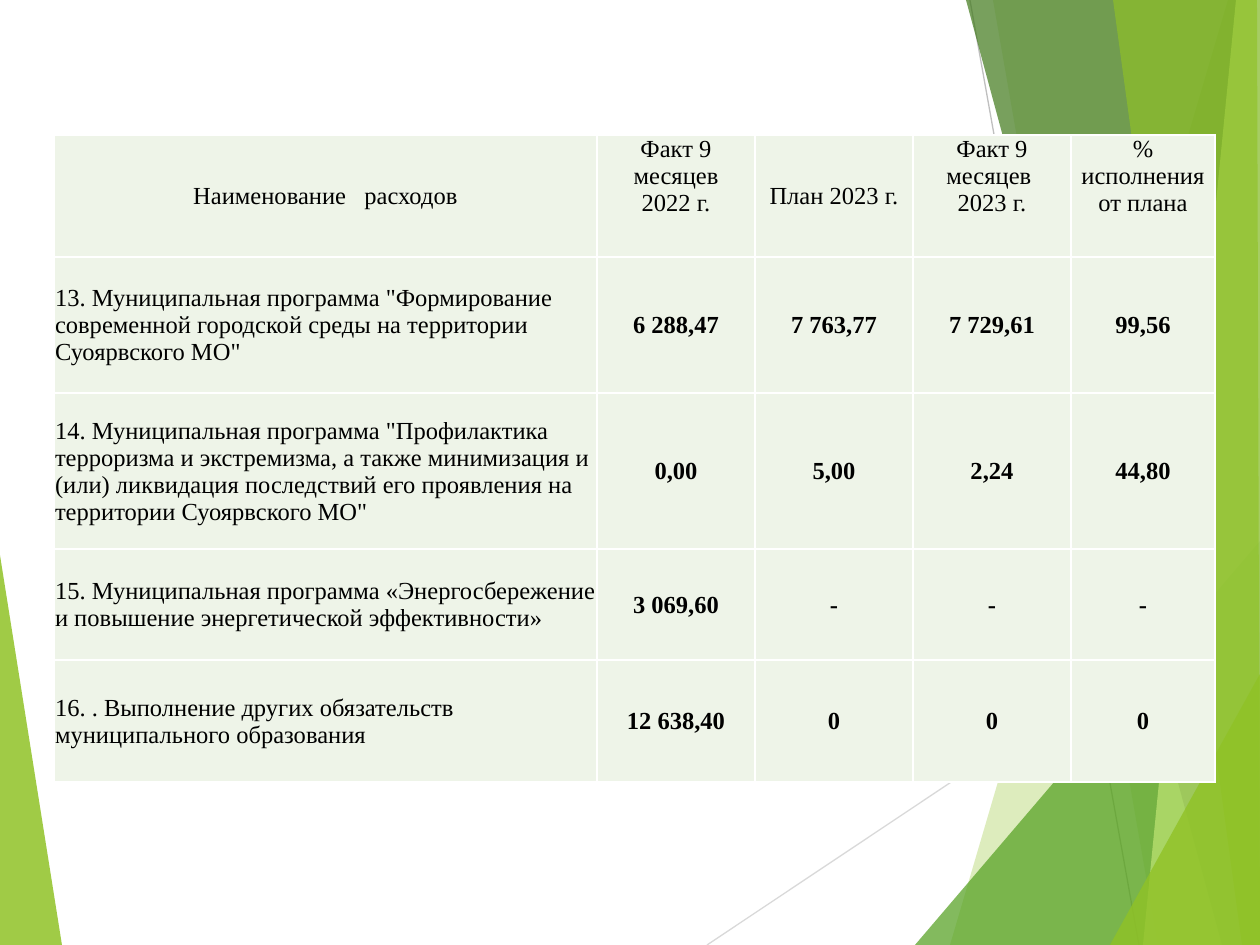
from lxml.etree import SubElement
from pptx import Presentation
from pptx.dml.color import RGBColor
from pptx.enum.shapes import MSO_CONNECTOR
from pptx.enum.text import MSO_ANCHOR, PP_ALIGN
from pptx.oxml import parse_xml
from pptx.oxml.ns import nsdecls, qn
from pptx.util import Pt

EMU_PER_PX = 914400 / 126
SLIDE_WIDTH, SLIDE_HEIGHT = 1260, 945
FONT = "Times New Roman"
CELL_FILL = "EEF4E8"
BORDER = "FFFFFF"
COLUMN_WIDTHS = [543, 158, 158, 158, 144]
ROW_HEIGHTS = [122, 136, 156, 111, 122]
TOP_ALIGNED_HEADERS = {1, 3, 4}

EXPENSES = [
    ["Наименование   расходов", "Факт 9 месяцев\n2022 г.", "План 2023 г.",
     "Факт 9 месяцев \n2023 г.", "% исполнения от плана"],
    ['13. Муниципальная программа "Формирование современной городской среды '
     'на территории Суоярвского МО"', "6 288,47", "7 763,77", "7 729,61", "99,56"],
    ['14. Муниципальная программа "Профилактика терроризма и экстремизма, '
     'а также минимизация и (или) ликвидация последствий его проявления '
     'на территории Суоярвского МО"', "0,00", "5,00", "2,24", "44,80"],
    ["15. Муниципальная программа «Энергосбережение и повышение "
     "энергетической эффективности»", "3 069,60", "-", "-", "-"],
    ["16. . Выполнение других обязательств муниципального образования",
     "12 638,40", "0", "0", "0"],
]


def px(length):
    return round(length * EMU_PER_PX)


def rgb(value):
    return RGBColor.from_string(value)


def add_facet(slide, left, top, points, color, opacity):
    corners = [(left + x, top + y) for x, y in points]
    builder = slide.shapes.build_freeform(*corners[0], scale=EMU_PER_PX)
    builder.add_line_segments(corners[1:], close=True)
    facet = builder.convert_to_shape()
    facet.shadow.inherit = False
    facet.line.fill.background()
    facet.fill.solid()
    facet.fill.fore_color.rgb = rgb(color)
    color_xml = facet._element.spPr.find(qn("a:solidFill"))[0]
    SubElement(color_xml, qn("a:alpha")).set("val", str(opacity * 1000))


def add_ray(slide, left, top, start, end, color):
    ray = slide.shapes.add_connector(
        MSO_CONNECTOR.STRAIGHT, px(left + start[0]), px(top + start[1]),
        px(left + end[0]), px(top + end[1]))
    ray.line.color.rgb = rgb(color)
    ray.line.width = Pt(0.75)
    SubElement(ray._element.spPr, qn("a:effectLst"))


def add_left_decoration(slide, left, top, width, height):
    add_facet(slide, left, top, [(0, 0), (width, height), (0, height)], "90C226", 85)


def add_right_decoration(slide, left, top, width, height):
    add_ray(slide, left, top, (0, height), (width, 576), "D9D9D9")
    add_ray(slide, left, top, (263, 0), (432, height), "BFBFBF")
    upper, lower = (width, 0), (width, height)
    facets = [
        ([(521, 0), (243, height), lower, upper], "90C226", 30),
        ([(286, 0), (451, height), lower, upper], "90C226", 20),
        ([(208, height), (width, 541), lower], "54A021", 72),
        ([(259, 0), (515, height), lower, upper], "3F7819", 70),
        ([(529, 0), (436, height), lower, upper], "C0E474", 70),
        ([(406, 0), (535, height), lower, (550, 0)], "90C226", 65),
        ([(403, height), (width, 674), lower], "90C226", 80),
    ]
    for points, color, opacity in facets:
        add_facet(slide, left, top, points, color, opacity)


def add_borders(cell):
    properties = cell._tc.get_or_add_tcPr()
    for position, side in enumerate(("lnL", "lnR", "lnT", "lnB")):
        properties.insert(position, parse_xml(
            f'<a:{side} {nsdecls("a")} w="{Pt(1)}"><a:solidFill>'
            f'<a:srgbClr val="{BORDER}"/></a:solidFill></a:{side}>'))


def format_cell(cell, text, row, column):
    cell.text = text
    cell.margin_left = cell.margin_right = cell.margin_top = px(1)
    cell.margin_bottom = 0
    at_top = row == 0 and column in TOP_ALIGNED_HEADERS
    cell.vertical_anchor = MSO_ANCHOR.TOP if at_top else MSO_ANCHOR.MIDDLE
    cell.fill.solid()
    cell.fill.fore_color.rgb = rgb(CELL_FILL)
    add_borders(cell)
    for paragraph in cell.text_frame.paragraphs:
        is_name = row > 0 and column == 0
        paragraph.alignment = PP_ALIGN.LEFT if is_name else PP_ALIGN.CENTER
        paragraph.font.name = FONT
        paragraph.font.size = Pt(14)
        paragraph.font.bold = row > 0 and column > 0
        paragraph.font.color.rgb = rgb("000000")


def add_expense_table(slide, left, top):
    table = slide.shapes.add_table(
        len(ROW_HEIGHTS), len(COLUMN_WIDTHS), px(left), px(top),
        px(sum(COLUMN_WIDTHS)), px(sum(ROW_HEIGHTS))).table
    table.first_row = table.horz_banding = False
    for column, width in zip(table.columns, COLUMN_WIDTHS):
        column.width = px(width)
    for row, height in zip(table.rows, ROW_HEIGHTS):
        row.height = px(height)
    for row, texts in enumerate(EXPENSES):
        for column, text in enumerate(texts):
            format_cell(table.cell(row, column), text, row, column)


def main():
    presentation = Presentation()
    presentation.slide_width = px(SLIDE_WIDTH)
    presentation.slide_height = px(SLIDE_HEIGHT)
    slide = presentation.slides.add_slide(presentation.slide_layouts[6])
    add_left_decoration(slide, 0, 555, 62, 390)
    add_right_decoration(slide, 707, 0, 553, SLIDE_HEIGHT)
    add_expense_table(slide, 54, 135)
    presentation.save("out.pptx")


if __name__ == "__main__":
    main()
